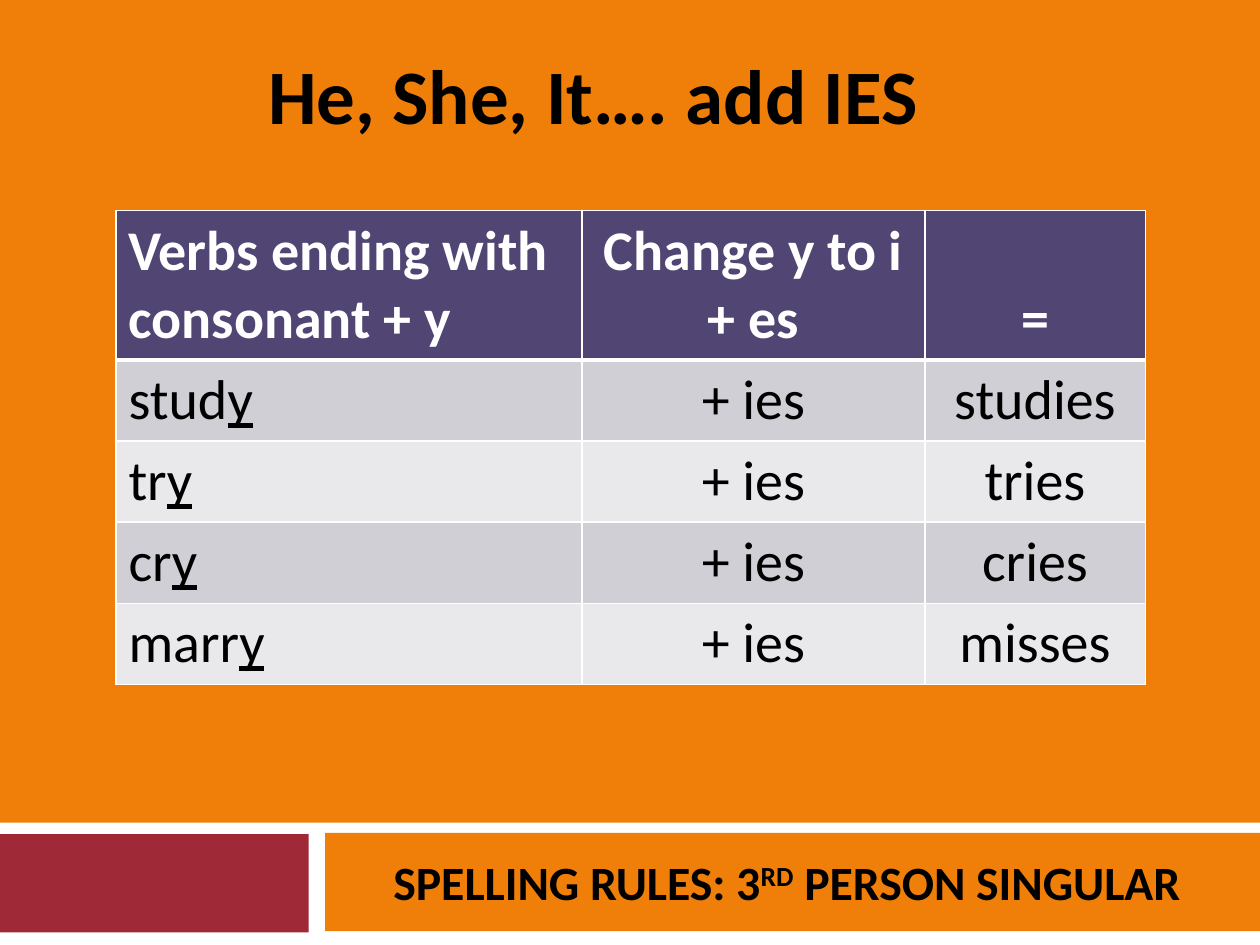
"""Build a slide on the -ies spelling rule for third person verbs."""
from lxml.etree import SubElement
from pptx import Presentation
from pptx.dml.color import RGBColor
from pptx.enum.shapes import MSO_SHAPE
from pptx.enum.text import MSO_ANCHOR, MSO_AUTO_SIZE, PP_ALIGN
from pptx.oxml.ns import qn
from pptx.util import Inches, Pt


def paint(fill, color):
    fill.solid()
    fill.fore_color.rgb = RGBColor.from_string(color)


def style(p, size, color, bold, align):
    p.alignment = align
    for r in p.runs:
        r.font.name, r.font.size, r.font.bold = "Calibri", Pt(size), bold
        paint(r.font.fill, color)


prs = Presentation()
prs.slide_width, prs.slide_height = Inches(10), Inches(7.5)
s = prs.slides.add_slide(prs.slide_layouts[0])
paint(s.background.fill, "F07F09")

bands = [
    (0, 6.53, 10, 0.97, "FFFFFF"),
    (-0.01, 6.62, 2.46, 0.78, "9F2936"),
    (2.58, 6.61, 7.42, 0.78, "F07F09"),
]
for *box, color in bands:
    sp = s.shapes.add_shape(MSO_SHAPE.RECTANGLE, *map(Inches, box))
    sp.shadow.inherit = False
    sp.line.fill.background()
    paint(sp.fill, color)
    s.shapes._spTree.remove(sp._element)
    s.shapes._spTree.insert_element_before(sp._element, "p:sp")
for sp in list(s.shapes)[:2]:
    s.shapes._spTree.remove(sp._element)
    s.shapes._spTree.insert(4, sp._element)

rows = [
    ("Verbs ending with\nconsonant + y", "Change y to i\n+ es", "="),
    ("study", "+ ies", "studies"),
    ("try", "+ ies", "tries"),
    ("cry", "+ ies", "cries"),
    ("marry", "+ ies", "misses"),
]
box = map(Inches, (0.92, 1.67, 8.17, 3.74))
table = s.shapes.add_table(len(rows), 3, *box).table
for col, width in zip(table.columns, (3.7, 2.72, 1.75)):
    col.width = Inches(width)
for i, row in enumerate(rows):
    table.rows[i].height = Inches(0.64 if i else 1.18)
    for j, text in enumerate(row):
        cell = table.cell(i, j)
        tcPr = cell._tc.get_or_add_tcPr()
        for side in ("lnL", "lnR", "lnT", "lnB"):
            thick = (i, side) in ((0, "lnB"), (1, "lnT"))
            ln = SubElement(tcPr, qn(f"a:{side}"), w=str(Pt(3 if thick else 1)))
            SubElement(SubElement(ln, qn("a:solidFill")), qn("a:srgbClr"), val="FFFFFF")
        paint(cell.fill, ("E9E9EB", "D0CFD5")[i % 2] if i else "514573")
        cell.vertical_anchor = MSO_ANCHOR.TOP if i else MSO_ANCHOR.BOTTOM
        cell.text_frame.text = text
        if i and j == 0:
            p = cell.text_frame.paragraphs[0]
            p.runs[0].text = text[:-1]
            r = p.add_run()
            r.text = text[-1]
            r.font.underline = True
        for p in cell.text_frame.paragraphs:
            style(p, 32, "000000" if i else "FFFFFF", i == 0,
                  PP_ALIGN.CENTER if j else PP_ALIGN.LEFT)

title, subtitle = s.shapes.title, s.placeholders[1]
title.text_frame.text = "He, She, It…. add IES"
p = subtitle.text_frame.paragraphs[0]
for text in ("SPELLING RULES: 3", "RD", " PERSON SINGULAR"):
    p.add_run().text = text
p.runs[1]._r.get_or_add_rPr().set("baseline", "30000")
p.space_before = Pt(7)

texts = [
    (title, (1.42, 0.33, 6.58, 0.84), 44, MSO_ANCHOR.TOP),
    (subtitle, (2.58, 6.62, 7.33, 0.75), 27.3, MSO_ANCHOR.MIDDLE),
]
for sp, box, size, anchor in texts:
    sp.left, sp.top, sp.width, sp.height = map(Inches, box)
    tf = sp.text_frame
    tf.auto_size, tf.vertical_anchor = MSO_AUTO_SIZE.NONE, anchor
    style(tf.paragraphs[0], size, "000000", True, PP_ALIGN.CENTER)

prs.save("out.pptx")
